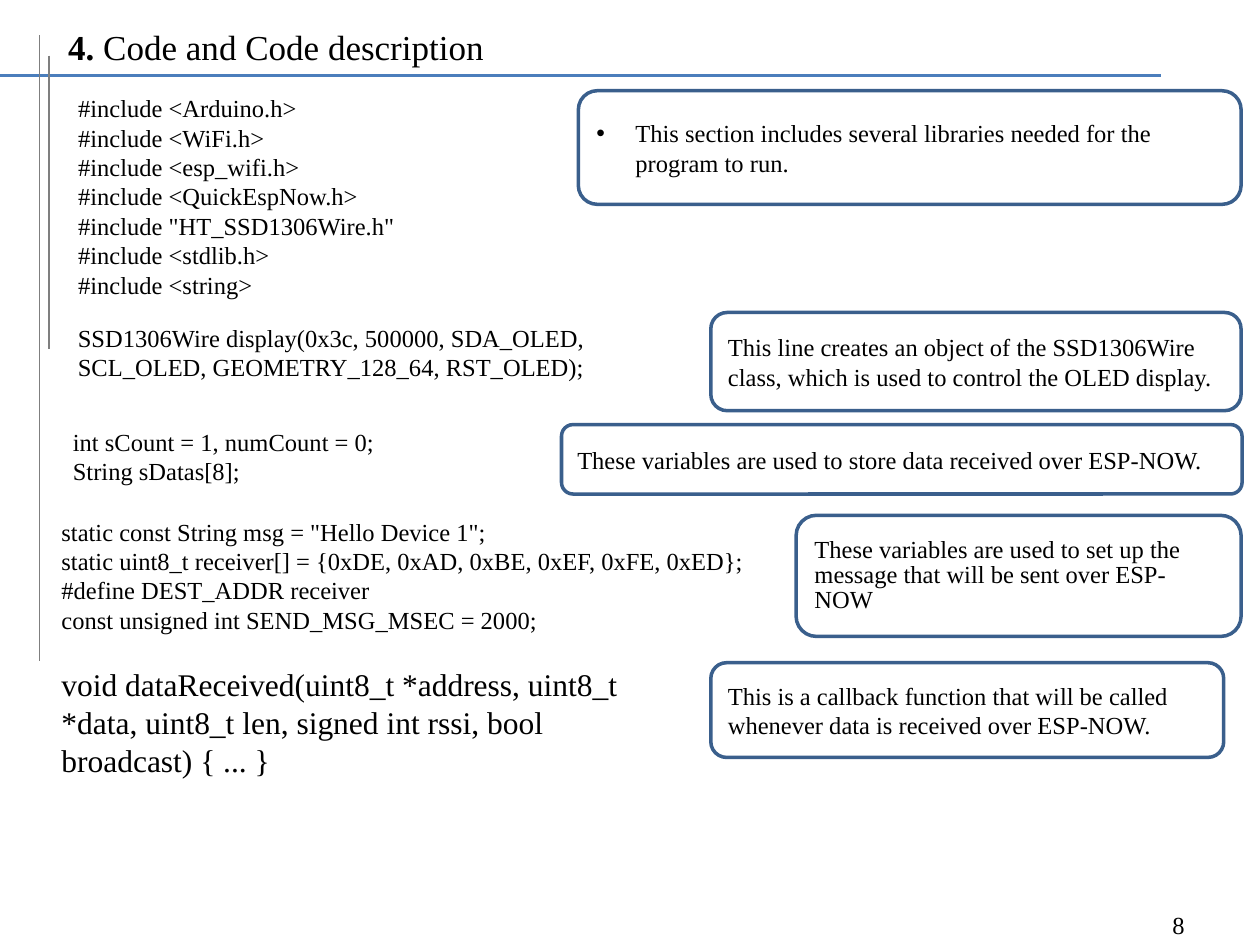
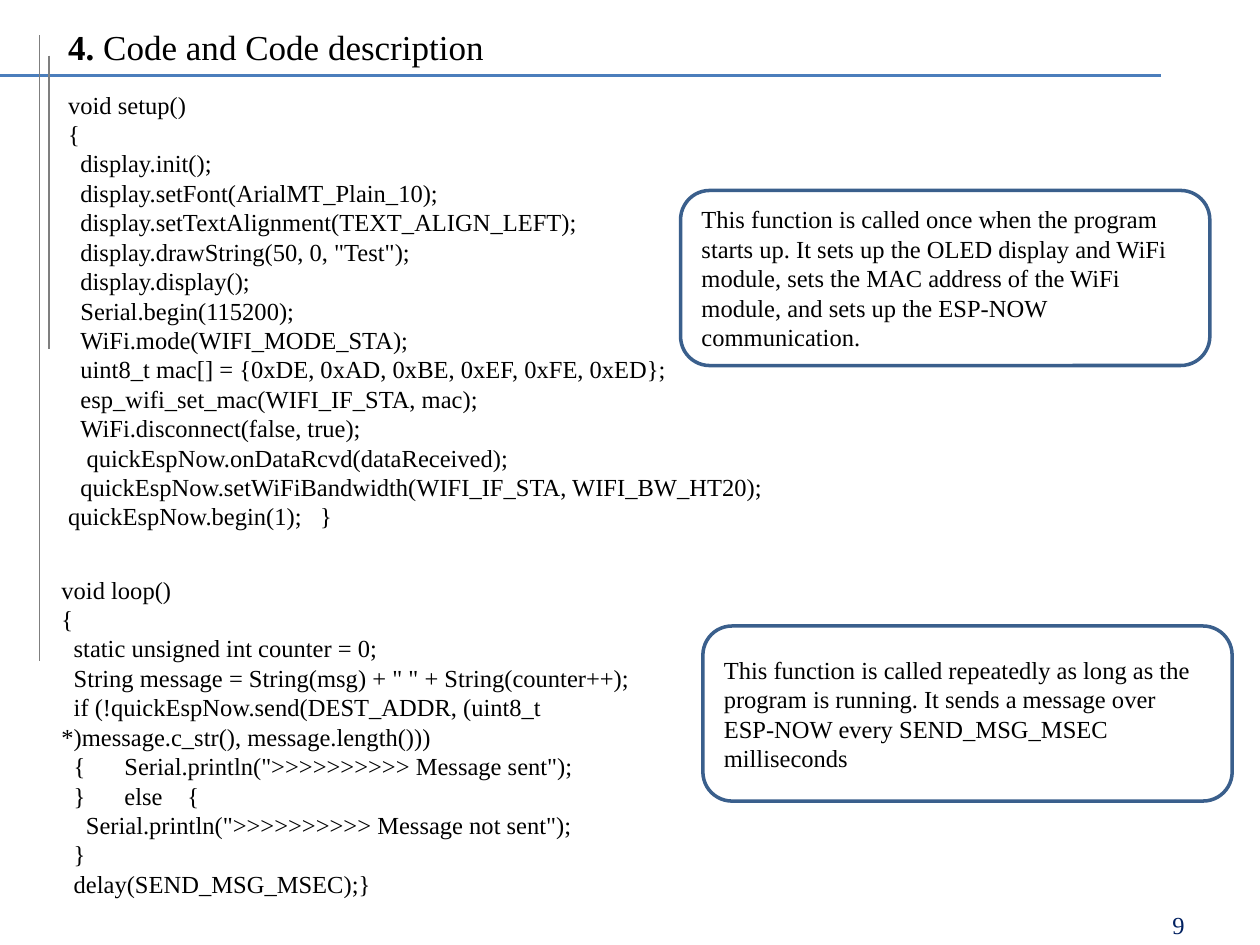
from lxml.etree import SubElement
from pptx import Presentation
from pptx.dml.color import RGBColor
from pptx.enum.shapes import MSO_CONNECTOR, MSO_SHAPE
from pptx.enum.text import MSO_ANCHOR, MSO_AUTO_SIZE, PP_ALIGN
from pptx.oxml.ns import qn
from pptx.util import Cm, Pt

FONT = "Times New Roman"
BLACK, NAVY = "000000", "002060"
RULE_BLUE, MARGIN_GREY, BOX_BLUE = "4B7EBC", "7F7F7F", "3A5F8C"
SPACE_WIDTH = 3.5

MARGIN_LINES = [
    (0, 1.52, 23.4, 1.52, RULE_BLUE, 2),
    (0.79, 0.71, 0.79, 13.33, MARGIN_GREY, 0.75),
    (0.99, 1.12, 0.99, 7.04, MARGIN_GREY, 0.75),
]

INCLUDES = """#include <Arduino.h>
#include <WiFi.h>
#include <esp_wifi.h>
#include <QuickEspNow.h>
#include "HT_SSD1306Wire.h"
#include <stdlib.h>
#include <string>"""

DISPLAY = "SSD1306Wire display(0x3c, 500000, SDA_OLED, SCL_OLED, GEOMETRY_128_64, RST_OLED);"

COUNTERS = """int sCount = 1, numCount = 0;
String sDatas[8];"""

MESSAGE = """static const String msg = "Hello Device 1";
static uint8_t receiver[] = {0xDE, 0xAD, 0xBE, 0xEF, 0xFE, 0xED};
#define DEST_ADDR receiver
const unsigned int SEND_MSG_MSEC = 2000;"""

CALLBACK = ("void dataReceived(uint8_t *address, uint8_t *data, uint8_t len, "
            "signed int rssi, bool broadcast) { ... }")

SETUP = """void setup()
{
  display.init();
  display.setFont(ArialMT_Plain_10);
  display.setTextAlignment(TEXT_ALIGN_LEFT);
  display.drawString(50, 0, "Test");
  display.display();
  Serial.begin(115200);
  WiFi.mode(WIFI_MODE_STA);
  uint8_t mac[] = {0xDE, 0xAD, 0xBE, 0xEF, 0xFE, 0xED};
  esp_wifi_set_mac(WIFI_IF_STA, mac);
  WiFi.disconnect(false, true);
   quickEspNow.onDataRcvd(dataReceived);
  quickEspNow.setWiFiBandwidth(WIFI_IF_STA, WIFI_BW_HT20);
quickEspNow.begin(1);\t}"""

LOOP = """void loop()
{
  static unsigned int counter = 0;
  String message = String(msg) + " " + String(counter++);
  if (!quickEspNow.send(DEST_ADDR, (uint8_t *)message.c_str(), message.length()))
  {\tSerial.println(">>>>>>>>>> Message sent");
  }\telse\t{
    Serial.println(">>>>>>>>>> Message not sent");
  }
  delay(SEND_MSG_MSEC);}"""

TAB_STOPS = {
    "quickEspNow.begin(1);\t}": [8.67],
    '{\tSerial.println(">>>>>>>>>> Message sent");': [0.98],
    "}\telse\t{": [0.72, 1.75],
}

PAGES = [
    {
        "number": "8",
        "number_color": BLACK,
        "code": [
            (INCLUDES, 1.32, 1.75, 12.7, 4.45, 14),
            (DISPLAY, 1.32, 6.38, 12.7, 1.45, 14),
            (COUNTERS, 1.22, 8.48, 12.7, 1.45, 14),
            (MESSAGE, 0.99, 10.29, 17.09, 2.64, 14),
            (CALLBACK, 0.99, 13.28, 12.7, 2.57, 18),
        ],
        "explanations": [
            ("This section includes several libraries needed for the program to run.",
             11.66, 1.83, 13.36, 2.29, "bullet"),
            ("This line creates an object of the SSD1306Wire class, which is used to "
             "control the OLED display.", 14.33, 6.3, 10.69, 1.98, ""),
            ("These variables are used to store data received over ESP-NOW.",
             11.32, 8.56, 13.72, 1.4, ""),
            ("These variables are used to set up the message that will be sent over ESP-NOW",
             16.05, 10.39, 8.97, 2.44, "tight"),
            ("This is a callback function that will be called whenever data is received "
             "over ESP-NOW.", 14.33, 13.36, 10.34, 1.91, ""),
        ],
    },
    {
        "number": "9",
        "number_color": NAVY,
        "code": [
            (SETUP, 1.12, 1.68, 18.64, 9.25, 14),
            (LOOP, 0.99, 11.46, 12.47, 6.83, 14),
        ],
        "explanations": [
            ("This function is called once when the program starts up. It sets up the OLED "
             "display and WiFi module, sets the MAC address of the WiFi module, and sets up "
             "the ESP-NOW communication.", 13.72, 3.84, 10.67, 3.53, ""),
            ("This function is called repeatedly as long as the program is running. It sends "
             "a message over ESP-NOW every SEND_MSG_MSEC milliseconds",
             14.17, 12.62, 10.67, 3.53, ""),
        ],
    },
]


def rgb(value):
    return RGBColor.from_string(value)


def style(paragraph, size, color=BLACK, align=PP_ALIGN.LEFT):
    paragraph.alignment = align
    paragraph.space_before = Pt(0)
    paragraph.font.name = FONT
    paragraph.font.size = Pt(size)
    paragraph.font.color.rgb = rgb(color)


prs = Presentation()
prs.slide_width, prs.slide_height = Cm(25.4), Cm(19.05)

for page in PAGES:
    slide = prs.slides.add_slide(prs.slide_layouts[1])

    for x1, y1, x2, y2, color, weight in MARGIN_LINES:
        rule = slide.shapes.add_connector(
            MSO_CONNECTOR.STRAIGHT, Cm(x1), Cm(y1), Cm(x2), Cm(y2))
        rule.line.color.rgb = rgb(color)
        rule.line.width = Pt(weight)
        SubElement(rule._element.spPr, qn("a:effectLst"))

    heading = slide.shapes.title
    heading.left, heading.top, heading.width, heading.height = (
        Cm(1.12), Cm(0.38), Cm(21.39), Cm(1.12))
    heading.text_frame.vertical_anchor = MSO_ANCHOR.TOP
    heading.text_frame.auto_size = MSO_AUTO_SIZE.NONE
    heading_line = heading.text_frame.paragraphs[0]
    section_number = heading_line.add_run()
    section_number.text = "4. "
    section_number.font.bold = True
    heading_line.add_run().text = "Code and Code description"
    style(heading_line, 20)

    page_number = slide.shapes.add_textbox(Cm(18.21), Cm(18.14), Cm(5.92), Cm(1.02))
    page_number.text_frame.vertical_anchor = MSO_ANCHOR.MIDDLE
    page_number.text_frame.word_wrap = True
    page_number.text_frame.text = page["number"]
    style(page_number.text_frame.paragraphs[0], 14, page["number_color"], PP_ALIGN.RIGHT)

    for order, (code, left, top, width, height, size) in enumerate(page["code"]):
        area = Cm(left), Cm(top), Cm(width), Cm(height)
        if order == 0:
            listing = slide.placeholders[1]
            listing.left, listing.top, listing.width, listing.height = area
        else:
            listing = slide.shapes.add_textbox(*area)
        listing.text_frame.word_wrap = True
        listing.text_frame.auto_size = MSO_AUTO_SIZE.NONE
        lines = code.split("\n")
        listing.text_frame.text = "\n".join(line.lstrip() for line in lines)
        for line, paragraph in zip(lines, listing.text_frame.paragraphs):
            statement = line.lstrip()
            properties = paragraph._p.get_or_add_pPr()
            properties.set("marL", "0")
            properties.set("indent", str(Pt(SPACE_WIDTH * (len(line) - len(statement)))))
            SubElement(properties, qn("a:buNone"))
            if statement in TAB_STOPS:
                stops = SubElement(properties, qn("a:tabLst"))
                for position in TAB_STOPS[statement]:
                    SubElement(stops, qn("a:tab"), pos=str(Cm(position)), algn="l")
            style(paragraph, size)

    for explanation, left, top, width, height, layout in page["explanations"]:
        box = slide.shapes.add_shape(
            MSO_SHAPE.ROUNDED_RECTANGLE, Cm(left), Cm(top), Cm(width), Cm(height))
        box.shadow.inherit = False
        box.fill.background()
        box.line.color.rgb = rgb(BOX_BLUE)
        box.line.width = Pt(2)
        box.text_frame.word_wrap = True
        box.text_frame.vertical_anchor = MSO_ANCHOR.MIDDLE
        box.text_frame.text = explanation
        paragraph = box.text_frame.paragraphs[0]
        if layout == "bullet":
            properties = paragraph._p.get_or_add_pPr()
            properties.set("marL", str(Cm(0.79)))
            properties.set("indent", str(Cm(-0.79)))
            SubElement(properties, qn("a:buFont"), typeface="Arial")
            SubElement(properties, qn("a:buChar"), char="•")
        elif layout == "tight":
            paragraph.line_spacing = Pt(14.2)
        style(paragraph, 14)

prs.save("out.pptx")
